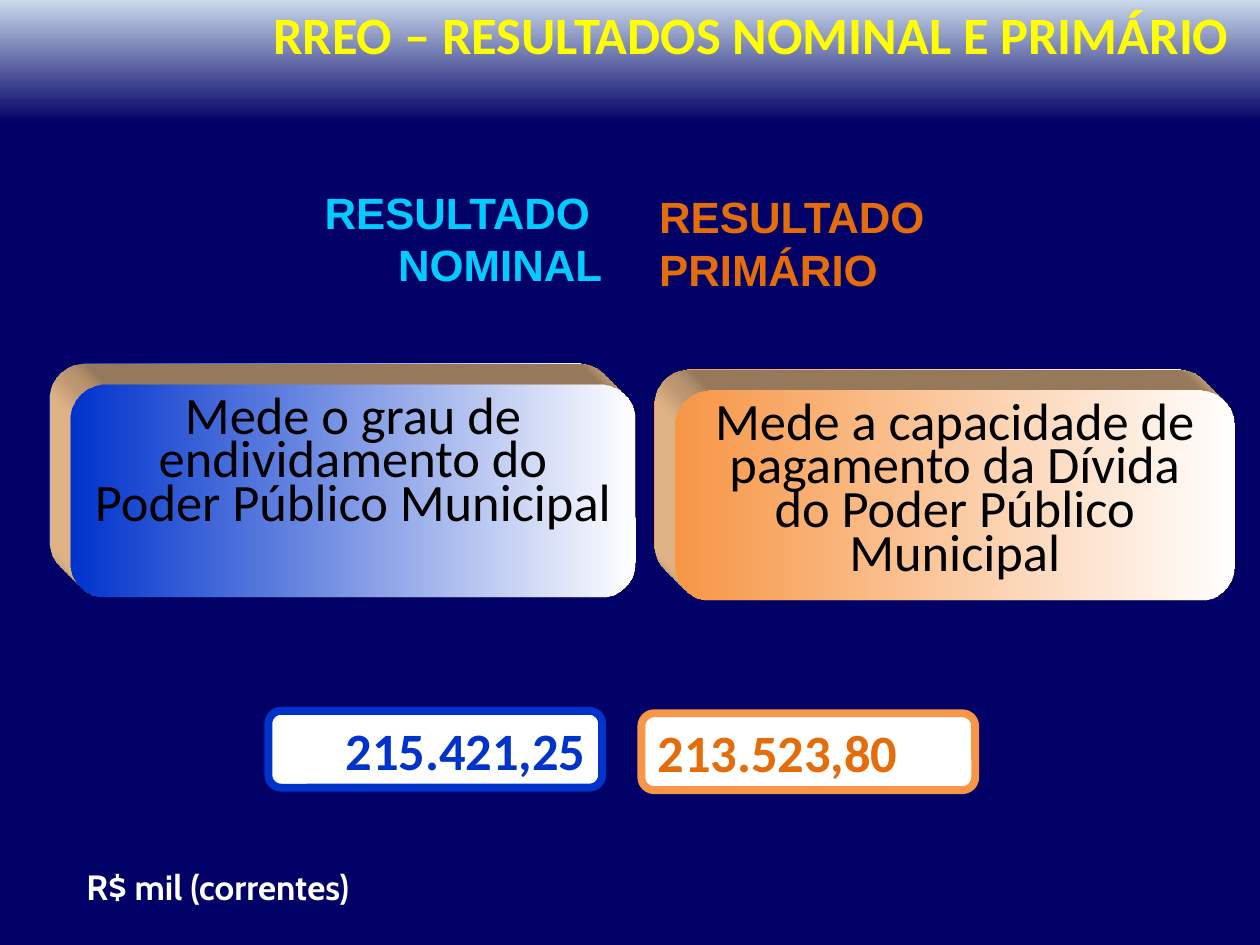
from lxml import etree
from pptx import Presentation
from pptx.dml.color import RGBColor
from pptx.enum.shapes import MSO_SHAPE as Shape
from pptx.enum.text import MSO_ANCHOR as Anchor, MSO_AUTO_SIZE as AutoSize, PP_ALIGN as Align
from pptx.oxml import parse_xml
from pptx.util import Cm, Pt

# Content
COLORS = {
    "sky": "CAD9EB", "navy": "000066", "cyan": "00CCFF", "blue": "0033CC",
    "orange": "F79646", "dark_orange": "E46C0A", "tan": "FFCC99",
    "yellow": "FFFF00", "white": "FFFFFF", "black": "000000",
}
TITLE = "RREO – RESULTADOS NOMINAL E PRIMÁRIO"
UNIT = "R$ mil (correntes)"
# Boxes are (left, top, width, height) in cm
RESULTS = [
    {
        "heading": ["RESULTADO ", "NOMINAL"], "heading_box": (5.51, 3.45, 7.01, 2.69),
        "heading_color": "cyan",
        "meaning": "Mede o grau de endividamento do Poder Público Municipal",
        "meaning_box": (1.42, 7.75, 11.4, 4.29),
        "amount": "215.421,25", "amount_box": (5.41, 14.33, 6.73, 1.55),
        "amount_color": "blue", "accent": "blue", "align": Align.RIGHT,
    },
    {
        "heading": ["RESULTADO", "PRIMÁRIO"], "heading_box": (12.9, 3.45, 7.47, 2.87),
        "heading_color": "dark_orange",
        "meaning": "Mede a capacidade de pagamento da Dívida do Poder Público Municipal",
        "meaning_box": (13.61, 7.87, 11.28, 4.24),
        "amount": "213.523,80", "amount_box": (12.93, 14.38, 6.73, 1.55),
        "amount_color": "dark_orange", "accent": "orange", "align": Align.LEFT,
    },
]
NS = "http://schemas.openxmlformats.org/drawingml/2006/main"


def rgb(name):
    return RGBColor.from_string(COLORS[name])


def fill_gradient(fill, start, end, angle, end_at=1.0):
    fill.gradient()
    fill.gradient_angle = angle
    for stop, name, position in zip(fill.gradient_stops, (start, end), (0, end_at)):
        stop.color.rgb = rgb(name)
        stop.position = position


def write(shape, lines, size, font, color, align, bold=True, wrap=False,
          anchor=Anchor.MIDDLE, spacing=None):
    frame = shape.text_frame
    frame.word_wrap = wrap
    frame.vertical_anchor = anchor
    for index, line in enumerate(lines):
        paragraph = frame.add_paragraph() if index else frame.paragraphs[0]
        paragraph.alignment = align
        if spacing:
            paragraph.line_spacing = spacing
        run = paragraph.add_run()
        run.text = line
        run.font.size, run.font.name, run.font.bold = Pt(size), font, bold
        run.font.color.rgb = rgb(color)


def add_panel(box):
    panel = slide.shapes.add_shape(Shape.ROUNDED_RECTANGLE, *map(Cm, box))
    panel.shadow.inherit = False
    panel.fill.background()
    panel.line.fill.background()
    return panel


def extrude(panel, color):
    """Give the panel depth towards the top left."""
    properties = panel.fill._xPr
    for xml in (
        f'<a:scene3d xmlns:a="{NS}"><a:camera prst="legacyObliqueTopLeft"/>'
        '<a:lightRig rig="legacyFlat3" dir="b"/></a:scene3d>',
        f'<a:sp3d xmlns:a="{NS}" extrusionH="430200" prstMaterial="legacyMatte">'
        f'<a:extrusionClr><a:srgbClr val="{COLORS[color]}"/></a:extrusionClr></a:sp3d>',
    ):
        properties.append(parse_xml(xml))


prs = Presentation()
prs.slide_width, prs.slide_height = Cm(25.4), Cm(19.05)
slide = prs.slides.add_slide(prs.slide_layouts[5])
fill_gradient(slide.background.fill, "sky", "navy", 270, end_at=0.13)

# Title
title = slide.shapes.title
title.left, title.top, title.width, title.height = map(Cm, (0, -0.08, 25.04, 1.55))
write(title, [TITLE], 30, "Calibri", "yellow", Align.RIGHT, wrap=True, anchor=Anchor.TOP)
title.text_frame.auto_size = AutoSize.NONE

for result in RESULTS:
    # Heading
    heading = add_panel(result["heading_box"])
    write(heading, result["heading"], 25, "Arial", result["heading_color"], result["align"])

    # Raised card with the meaning
    card = add_panel(result["meaning_box"])
    fill_gradient(card.fill, result["accent"], "white", 0)
    extrude(card, "tan")
    write(card, [result["meaning"]], 30, "Calibri", "black", Align.CENTER,
          bold=False, wrap=True, anchor=Anchor.TOP, spacing=Pt(25))

    # Amount
    amount = add_panel(result["amount_box"])
    amount.fill.solid()
    amount.fill.fore_color.rgb = rgb("white")
    amount.line.color.rgb = rgb(result["accent"])
    amount.line.width = Pt(4.5)
    write(amount, [result["amount"]], 30, "Calibri", result["amount_color"], result["align"])

# Unit of the amounts
unit = slide.shapes.add_textbox(*map(Cm, (0.25, 17.32, 7.04, 1.12)))
write(unit, [UNIT], 20, "Cabin", "white", Align.RIGHT, anchor=Anchor.TOP)

prs.save("out.pptx")
